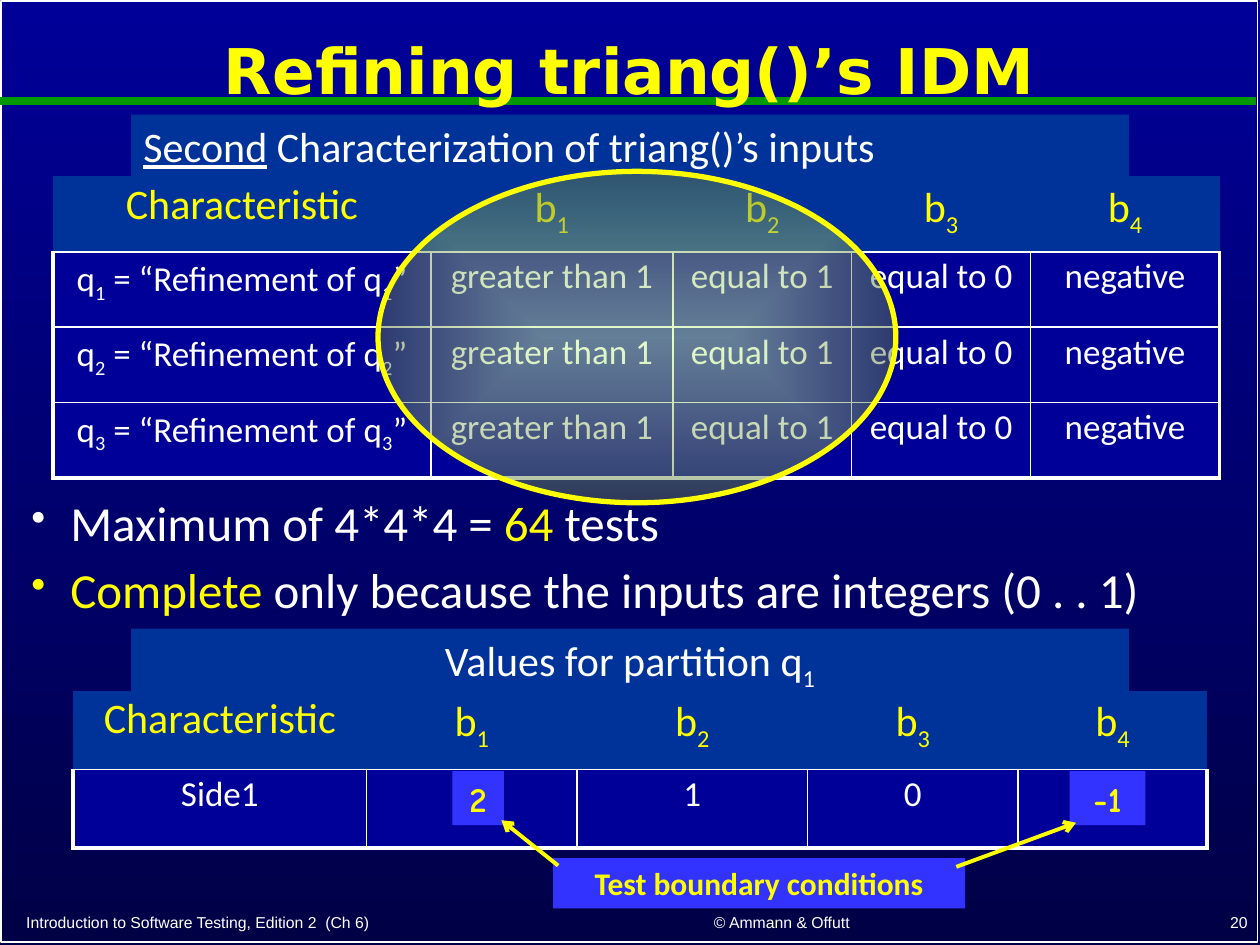
from lxml import etree
from pptx import Presentation
from pptx.dml.color import RGBColor
from pptx.enum.shapes import MSO_CONNECTOR, MSO_SHAPE
from pptx.enum.text import MSO_ANCHOR, MSO_AUTO_SIZE, PP_ALIGN
from pptx.oxml import parse_xml
from pptx.oxml.ns import nsdecls, qn
from pptx.util import Inches, Pt

RECTANGLE, ELLIPSE = MSO_SHAPE.RECTANGLE, MSO_SHAPE.OVAL
STRAIGHT = MSO_CONNECTOR.STRAIGHT
LEFT, CENTER, RIGHT = PP_ALIGN.LEFT, PP_ALIGN.CENTER, PP_ALIGN.RIGHT
TOP, MIDDLE, BOTTOM = MSO_ANCHOR.TOP, MSO_ANCHOR.MIDDLE, MSO_ANCHOR.BOTTOM

WHITE = RGBColor(0xFF, 0xFF, 0xFF)
YELLOW = RGBColor(0xFF, 0xFF, 0x00)
GREEN = RGBColor(0x00, 0x99, 0x00)
NAVY = RGBColor(0x00, 0x00, 0x99)
MIDNIGHT = RGBColor(0x00, 0x00, 0x47)
STEEL = RGBColor(0x00, 0x33, 0x99)
VIOLET = RGBColor(0x33, 0x33, 0xFF)

prs = Presentation()
prs.slide_width, prs.slide_height = Inches(10), Inches(7.5)
# One percent of the slide's width and height
X, Y = prs.slide_width / 100, prs.slide_height / 100
slide = prs.slides.add_slide(prs.slide_layouts[5])
shapes = slide.shapes


def write(paragraph, text, size, color, align=CENTER, font="Calibri", bold=False):
    """Add runs to a paragraph; every second part between bars is a subscript."""
    paragraph.alignment = align
    for i, part in enumerate(text.split("|")):
        run = paragraph.add_run()
        run.text = part
        run.font.name, run.font.size, run.font.bold = font, Pt(size), bold
        run.font.color.rgb = color
        if i % 2:
            run._r.get_or_add_rPr().set("baseline", "-25000")


def add_box(left, top, width, height, fill, kind=RECTANGLE):
    """Add a borderless shape placed in percent of the slide."""
    box = shapes.add_shape(kind, int(left * X), int(top * Y), int(width * X), int(height * Y))
    box.shadow.inherit = False
    box.line.fill.background()
    if fill is None:
        box.fill.background()
    else:
        box.fill.solid()
        box.fill.fore_color.rgb = fill
    box.text_frame.vertical_anchor = TOP
    return box


# Background, frame and footers
backdrop = slide.background.fill
backdrop.gradient()
backdrop.gradient_angle = 270
for stop, color in zip(backdrop.gradient_stops, (NAVY, MIDNIGHT)):
    stop.color.rgb = color

frame = add_box(0.1, 0.1, 99.7, 99.6, None)
frame.line.color.rgb, frame.line.width = WHITE, Pt(1)

for left, width, align, words in (
    (1.1, 43.1, LEFT, "Introduction to Software Testing, Edition 2  (Ch 6)"),
    (46.2, 31.7, CENTER, "© Ammann & Offutt"),
    (79.2, 20.8, RIGHT, "20"),
):
    footer = shapes.add_textbox(int(left * X), int(95.6 * Y), int(width * X), int(3.6 * Y))
    footer.text_frame.word_wrap = True
    footer.text_frame.vertical_anchor = BOTTOM
    write(footer.text_frame.paragraphs[0], words, 9, WHITE, align, "Arial")

# Tables with their captions
headings = ["Characteristic"] + [f"b|{n}" for n in range(1, 5)]
blocks = ["greater than 1", "equal to 1", "equal to 0", "negative"]
refinements = [[f"q|{n}| = “Refinement of q|{n}|”"] + blocks for n in range(1, 4)]
side_values = [["Side1", "", "1", "0", ""]]  # boundary values sit in the labels
captions = []

for caption_top, left, top, height, columns, rows in (
    (12.13, 4.2, 18.67, 31.9, (30, 19.2, 14.2, 14.2, 15), [headings] + refinements),
    (66.53, 5.8, 73.07, 16.67, (23.3, 16.7, 18.3, 16.7, 15), [headings] + side_values),
):
    captions.append(add_box(10.4, caption_top, 79.2, 6.67, STEEL).text_frame.paragraphs[0])
    table = shapes.add_table(len(rows), len(columns), int(left * X), int(top * Y),
                             int(sum(columns) * X), int(height * Y)).table
    for column, width in zip(table.columns, columns):
        column.width = int(width * X)
    last_row, last_column = len(rows) - 1, len(columns) - 1
    for r, row in enumerate(rows):
        table.rows[r].height = int(height * Y / len(rows))
        for c, words in enumerate(row):
            cell = table.cell(r, c)
            cell.fill.solid()
            cell.fill.fore_color.rgb = NAVY if r else STEEL
            paragraph = cell.text_frame.paragraphs[0]
            paragraph.line_spacing = 0.9
            if words:
                write(paragraph, words, 20 if r else 24, WHITE if r else YELLOW)
            # Thick outer edge around the data, thin lines within, none on the header
            edges = {
                "L": 0 if r == 0 else 2.25 if c == 0 else 1,
                "R": 0 if r == 0 else 2.25 if c == last_column else 1,
                "T": 0 if r == 0 else 1,
                "B": 2.25 if r == last_row else 1,
            }
            for i, (edge, points) in enumerate(edges.items()):
                paint = f'<a:solidFill><a:srgbClr val="{WHITE}"/></a:solidFill>' if points else "<a:noFill/>"
                cell._tc.get_or_add_tcPr().insert(i, parse_xml(
                    f'<a:ln{edge} {nsdecls("a")} w="{int(Pt(points))}">{paint}</a:ln{edge}>'))

write(captions[0], "Second", 24, WHITE, LEFT)
captions[0].runs[0].font.underline = True
write(captions[0], " Characterization of triang()’s inputs", 24, WHITE, LEFT)
write(captions[1], "Values for partition q|1", 24, WHITE)

# Bullets
notes = shapes.add_textbox(int(1.5 * X), int(52.13 * Y), int(97 * X), int(16.4 * Y)).text_frame
notes.word_wrap = True
for i, parts in enumerate((
    (("Maximum of 4*4*4 = ", WHITE), ("64", YELLOW), (" tests", WHITE)),
    (("Complete", YELLOW), (" only because the inputs are integers (0 . . 1)", WHITE)),
)):
    bullet = notes.add_paragraph() if i else notes.paragraphs[0]
    bullet.line_spacing, bullet.space_before = 0.9, Pt(8)
    for words, color in parts:
        write(bullet, words, 28, color, LEFT)
    properties = bullet._p.get_or_add_pPr()
    properties.set("marL", str(Inches(0.31)))
    properties.set("indent", str(-Inches(0.31)))
    etree.SubElement(properties, qn("a:buSzPct")).set("val", "85000")
    etree.SubElement(properties, qn("a:buChar")).set("char", "•")

# Translucent highlight over b1 and b2
highlight = add_box(30, 18.13, 41.1, 35.07, None, ELLIPSE)
highlight.line.color.rgb, highlight.line.width = YELLOW, Pt(3)
glow = parse_xml(
    f'<a:gradFill {nsdecls("a")} rotWithShape="1"><a:gsLst>'
    '<a:gs pos="0"><a:srgbClr val="CCFF99"><a:alpha val="50000"/></a:srgbClr></a:gs>'
    '<a:gs pos="100000"><a:srgbClr val="5E7647"><a:alpha val="48000"/></a:srgbClr></a:gs>'
    '</a:gsLst><a:path path="shape">'
    '<a:fillToRect l="50000" t="50000" r="50000" b="50000"/></a:path></a:gradFill>')
no_fill = highlight._element.spPr.find(qn("a:noFill"))
highlight._element.spPr.replace(no_fill, glow)

# Boundary values and their label
for left, top, width, height, words, size, font in (
    (35.9, 81.6, 4.1, 5.73, "2", 20, "Comic Neue"),
    (84.9, 81.6, 6, 5.73, "-1", 20, "Comic Neue"),
    (43.9, 90.8, 32.7, 5.33, "Test boundary conditions", 18, "Calibri"),
):
    label = add_box(left, top, width, height, VIOLET)
    write(label.text_frame.paragraphs[0], words, size, YELLOW, font=font, bold=True)

# Rule under the title and arrows to the boundary values
for x1, y1, x2, y2, color, points, arrow in (
    (0, 10.67, 99.7, 10.67, GREEN, 4.5, False),
    (44.3, 91.6, 39.8, 86.8, YELLOW, 2.25, True),
    (75.9, 91.73, 85.4, 87.07, YELLOW, 2.25, True),
):
    line = shapes.add_connector(STRAIGHT, int(x1 * X), int(y1 * Y), int(x2 * X), int(y2 * Y))
    line.line.color.rgb, line.line.width = color, Pt(points)
    if arrow:
        etree.SubElement(line.line._get_or_add_ln(), qn("a:tailEnd")).set("type", "arrow")
    etree.SubElement(line._element.spPr, qn("a:effectLst"))

# Title, brought in front of the rule
title = shapes.title
title.left, title.top = int(0.1 * X), int(1.47 * Y)
title.width, title.height = int(99.7 * X), int(12.67 * Y)
title.text_frame.auto_size = MSO_AUTO_SIZE.NONE
title.text_frame.vertical_anchor = MIDDLE
heading = title.text_frame.paragraphs[0]
heading.line_spacing = 0.9
write(heading, "Refining triang()’s IDM", 36, YELLOW, font="DejaVu Sans", bold=True)
shapes._spTree.append(title._element)

prs.save("out.pptx")
